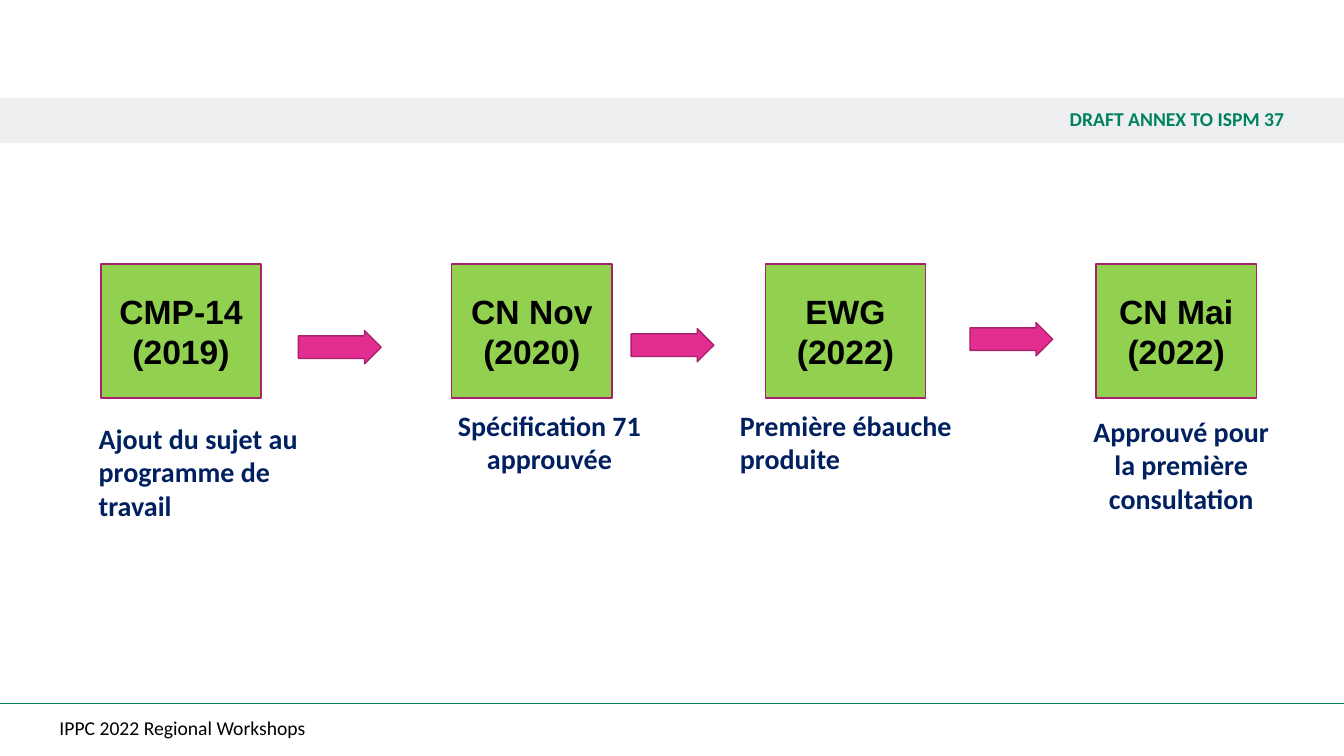
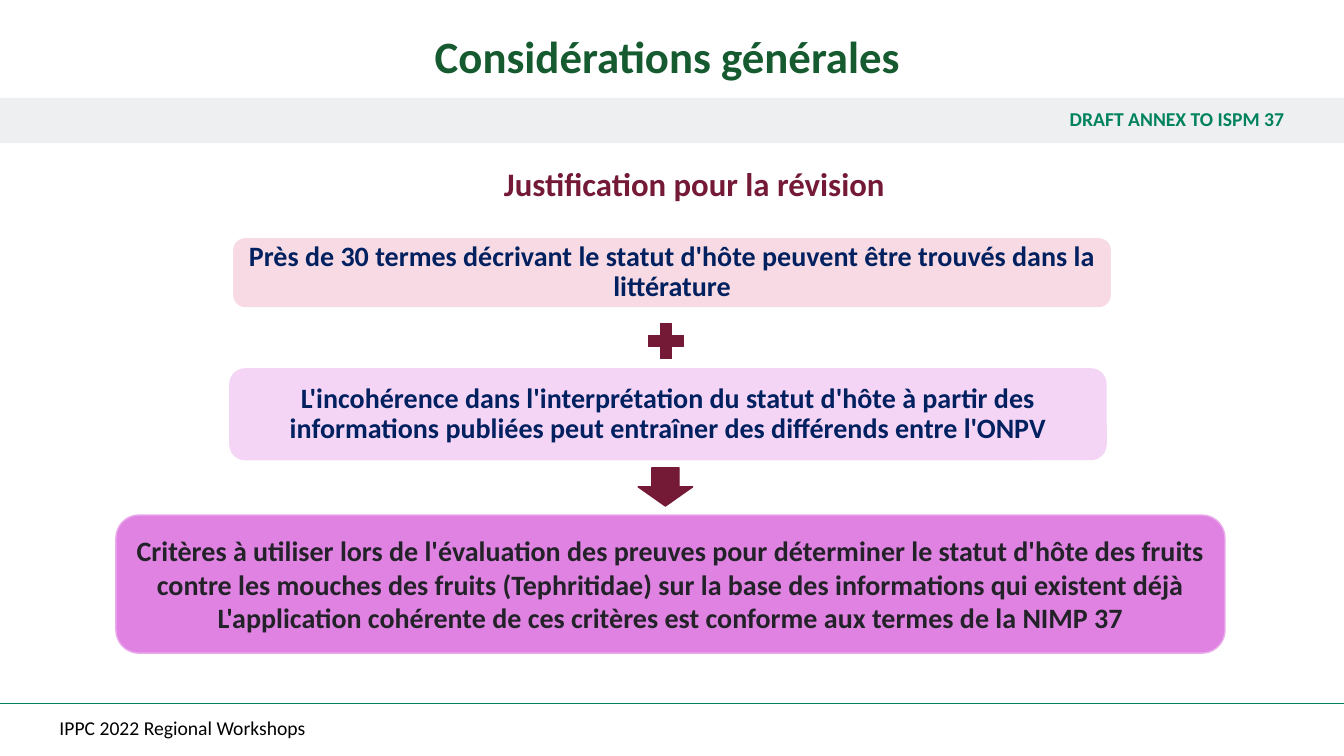
"""Build two slides on the draft annex to ISPM 37: its timeline and the reasons for the revision."""
from lxml import etree
from pptx import Presentation
from pptx.dml.color import RGBColor
from pptx.enum.shapes import MSO_CONNECTOR, MSO_SHAPE
from pptx.enum.text import MSO_ANCHOR, PP_ALIGN
from pptx.oxml.ns import qn
from pptx.util import Inches, Pt

RECT, ROUNDED = MSO_SHAPE.RECTANGLE, MSO_SHAPE.ROUNDED_RECTANGLE
RIGHT_ARROW, DOWN_ARROW, PLUS = MSO_SHAPE.RIGHT_ARROW, MSO_SHAPE.DOWN_ARROW, MSO_SHAPE.MATH_PLUS
STRAIGHT = MSO_CONNECTOR.STRAIGHT
LEFT, CENTER, RIGHT = PP_ALIGN.LEFT, PP_ALIGN.CENTER, PP_ALIGN.RIGHT
TOP, MIDDLE = MSO_ANCHOR.TOP, MSO_ANCHOR.MIDDLE

BLACK = RGBColor(0x00, 0x00, 0x00)
INK = RGBColor(0x22, 0x22, 0x28)
NAVY = RGBColor(0x00, 0x20, 0x60)
TEAL = RGBColor(0x00, 0x82, 0x5F)
DARK_GREEN = RGBColor(0x16, 0x5A, 0x30)
LIME = RGBColor(0x92, 0xD0, 0x50)
BAND_GREY = RGBColor(0xD8, 0xD9, 0xDC)
MAGENTA = RGBColor(0xE3, 0x2D, 0x91)
PLUM = RGBColor(0xA8, 0x21, 0x6B)
MAROON = RGBColor(0x74, 0x1A, 0x36)
PALE_PINK = RGBColor(0xF7, 0xDA, 0xE3)
PALE_LILAC = RGBColor(0xF4, 0xD5, 0xF5)
ORCHID = RGBColor(0xDF, 0x82, 0xE2)
LIGHT_ORCHID = RGBColor(0xEA, 0xAB, 0xEB)

SLIDE_WIDTH = 13.33
SIDE_MARGIN = 0.59


def add_figure(slide, kind, place, fill, outline=None):
    figure = slide.shapes.add_shape(kind, *map(Inches, place))
    figure.shadow.inherit = False
    figure.fill.solid()
    figure.fill.fore_color.rgb = fill
    if outline is None:
        figure.line.fill.background()
    else:
        figure.line.color.rgb = outline
        figure.line.width = Pt(1)
    return figure


def write(shape, text, size, color, font="Calibri", bold=True, align=CENTER,
          anchor=MIDDLE, spacing=None, margin=0.1):
    frame = shape.text_frame
    frame.text = text
    frame.word_wrap = True
    frame.vertical_anchor = anchor
    frame.margin_left = frame.margin_right = Inches(margin)
    for paragraph in frame.paragraphs:
        paragraph.alignment = align
        paragraph.line_spacing = spacing
        for run in paragraph.runs:
            run.font.name = font
            run.font.size = Pt(size)
            run.font.bold = bold
            run.font.color.rgb = color


deck = Presentation()
deck.slide_width, deck.slide_height = Inches(SLIDE_WIDTH), Inches(7.5)
timeline, rationale = [deck.slides.add_slide(deck.slide_layouts[6]) for _ in range(2)]

for slide in (timeline, rationale):
    rule = slide.shapes.add_connector(STRAIGHT, 0, Inches(6.98), Inches(SLIDE_WIDTH), Inches(6.98))
    rule.line.color.rgb = TEAL
    rule.line.width = Pt(1)
    etree.SubElement(rule._element.spPr, qn("a:effectLst"))

    footer = slide.shapes.add_textbox(0, Inches(7.06), Inches(SLIDE_WIDTH), Inches(0.35))
    write(footer, "IPPC 2022 Regional Workshops", 14, BLACK, bold=False, align=LEFT,
          spacing=0.9, margin=SIDE_MARGIN)

    band = add_figure(slide, RECT, (0, 0.97, SLIDE_WIDTH, 0.45), BAND_GREY)
    band_color = band._element.spPr.find(qn("a:solidFill"))[0]
    etree.SubElement(band_color, qn("a:alpha"), val="42000")
    write(band, "DRAFT ANNEX TO ISPM 37", 14, TEAL, align=RIGHT, spacing=0.9, margin=SIDE_MARGIN)

STEPS = [
    (1, "CMP-14 (2019)", "Ajout du sujet au programme de travail", (0.88, 4.13, 2.27, 1.11), LEFT),
    (4.48, "CN Nov (2020)", "Spécification 71 approuvée", (4.37, 4, 2.16, 0.77), CENTER),
    (7.59, "EWG\n(2022)", "Première ébauche produite", (7.24, 4, 2.55, 0.77), LEFT),
    (10.87, "CN Mai (2022)", "Approuvé pour la première consultation", (10.62, 4.06, 2.19, 1.11), CENTER),
]
for left, milestone, outcome, place, align in STEPS:
    step = add_figure(timeline, RECT, (left, 2.62, 1.59, 1.33), LIME, PLUM)
    write(step, milestone, 24, BLACK, font="Arial")
    caption = timeline.shapes.add_textbox(*map(Inches, place))
    write(caption, outcome, 20, NAVY, align=align, anchor=TOP)

for left, top in [(2.96, 3.28), (6.26, 3.26), (9.62, 3.2)]:
    arrow = add_figure(timeline, RIGHT_ARROW, (left, top, 0.82, 0.33), MAGENTA, PLUM)
    arrow.adjustments[0] = 0.68

title = rationale.shapes.add_textbox(Inches(2.28), Inches(0.24), Inches(8.78), Inches(1.22))
write(title, "Considérations générales ", 32, DARK_GREEN, anchor=TOP)

subtitle = rationale.shapes.add_textbox(Inches(4.9), Inches(1.58), Inches(4.75), Inches(0.49))
write(subtitle, "Justification pour la révision", 23.4, MAROON, align=LEFT, anchor=TOP)

ARGUMENTS = [
    ((2.32, 2.37, 8.69, 0.67), PALE_PINK, PALE_PINK, NAVY, 0.9,
     "Près de 30 termes décrivant le statut d'hôte peuvent être trouvés dans la littérature"),
    ((2.28, 3.66, 8.69, 0.9), PALE_LILAC, PALE_LILAC, NAVY, 0.9,
     "L'incohérence dans l'interprétation du statut d'hôte à partir des informations publiées "
     "peut entraîner des différends entre l'ONPV"),
    ((1.15, 5.11, 11, 1.37), ORCHID, LIGHT_ORCHID, INK, None,
     "Critères à utiliser lors de l'évaluation des preuves pour déterminer le statut d'hôte des "
     "fruits contre les mouches des fruits (Tephritidae) sur la base des informations qui "
     "existent déjà\n"
     "L'application cohérente de ces critères est conforme aux termes de la NIMP 37"),
]
for place, fill, outline, color, spacing, argument in ARGUMENTS:
    panel = add_figure(rationale, ROUNDED, place, fill, outline)
    write(panel, argument, 20, color, spacing=spacing)

add_figure(rationale, DOWN_ARROW, (6.33, 4.64, 0.54, 0.38), MAROON, MAROON)
add_figure(rationale, PLUS, (6.37, 3.15, 0.47, 0.47), MAROON, MAROON)

deck.save("out.pptx")
